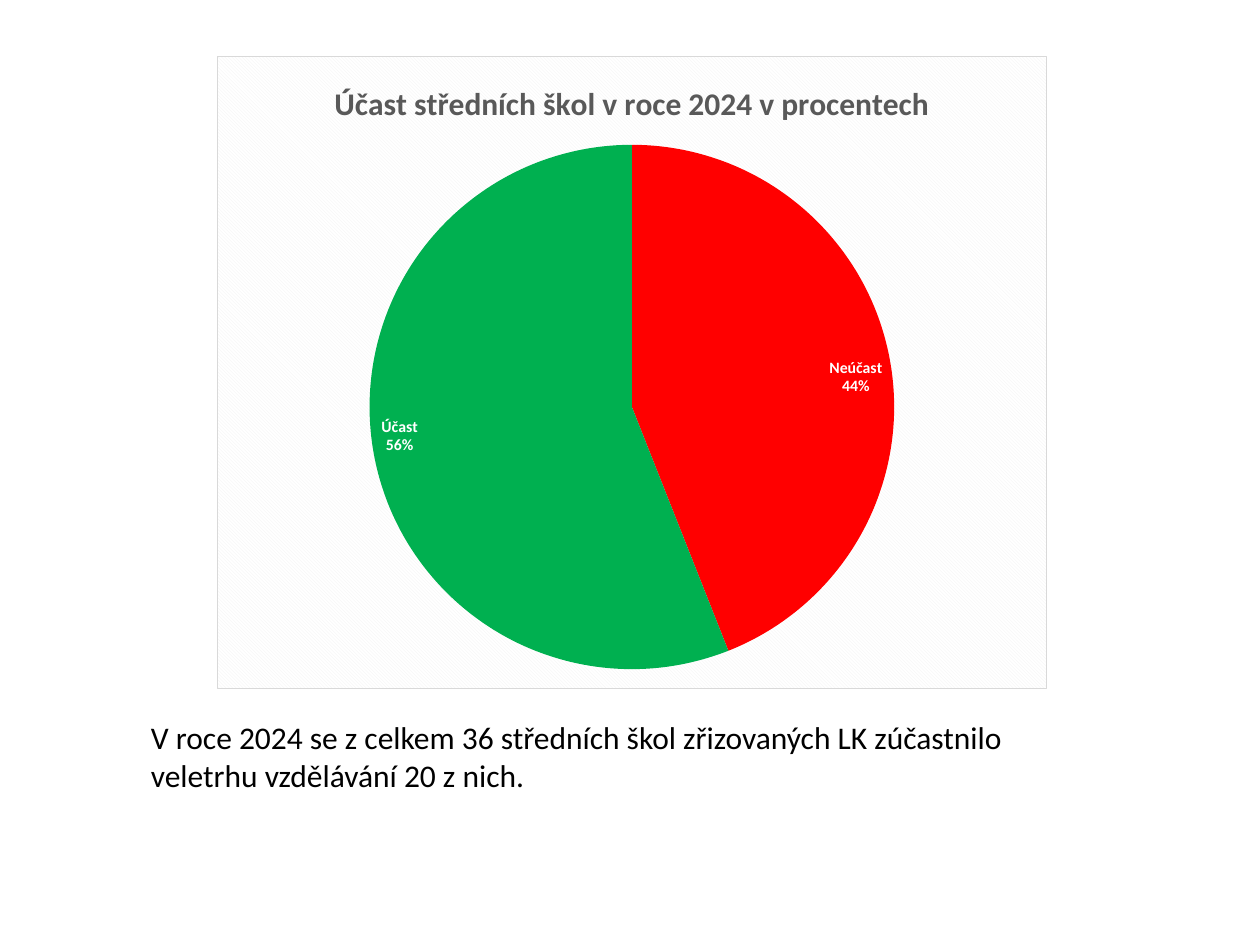
from dataclasses import dataclass

from lxml import etree
from pptx import Presentation
from pptx import util as u
from pptx.chart import data as chart_data
from pptx.dml.color import RGBColor
from pptx.enum import chart as chart_enum
from pptx.enum import text
from pptx.oxml import parse_xml
from pptx.oxml.ns import nsdecls, qn

WIDTH, HEIGHT = u.Inches(10), u.Inches(7.5)


@dataclass(frozen=True)
class Theme:
    """Colours, font and type sizes of the slide."""
    font: str = "Calibri"
    ink: str = "000000"
    title_ink: str = "595959"
    label_ink: str = "FFFFFF"
    absent: str = "FF0000"
    present: str = "00B050"
    hatch: str = "F2F2F2"
    paper: str = "FFFFFF"
    border: str = "D9D9D9"
    heading: int = 18
    base: int = 10
    label: int = 9


THEME = Theme()


def share_box(left, top, width, height):
    """Turn shares of the slide's size into lengths."""
    return (int(left * WIDTH), int(top * HEIGHT),
            int(width * WIDTH), int(height * HEIGHT))


def style_font(font, size, color, bold=False):
    """Apply the theme font with a size, colour and weight."""
    font.name = THEME.font
    font.size = u.Pt(size)
    font.bold = bold
    font.color.rgb = RGBColor.from_string(color)


def fill_chart_area(chart):
    """Give the chart area its hatched fill and thin border."""
    area = parse_xml(
        f'<c:spPr {nsdecls("c", "a")}><a:pattFill prst="dkDnDiag">'
        f'<a:fgClr><a:srgbClr val="{THEME.hatch}"/></a:fgClr>'
        f'<a:bgClr><a:srgbClr val="{THEME.paper}"/></a:bgClr></a:pattFill>'
        f'<a:ln w="{u.Pt(0.75)}"><a:solidFill><a:srgbClr val="{THEME.border}"/>'
        '</a:solidFill></a:ln></c:spPr>')
    chart.element.find(qn("c:chart")).addnext(area)


def place_plot(chart, **shares):
    """Fix the inner plot area at shares of the chart's size."""
    plot_area = chart.element.find(qn("c:chart")).find(qn("c:plotArea"))
    for old in plot_area.findall(qn("c:layout")):
        plot_area.remove(old)
    layout = parse_xml(f'<c:layout {nsdecls("c")}/>')
    manual = etree.SubElement(layout, qn("c:manualLayout"))
    settings = {"layoutTarget": "inner", "xMode": "edge", "yMode": "edge", **shares}
    for name, value in settings.items():
        etree.SubElement(manual, qn(f"c:{name}")).set("val", str(value))
    plot_area.insert(0, layout)


def add_attendance_pie(slide, box):
    """Place the pie of attending and absent schools in the box."""
    data = chart_data.CategoryChartData()
    data.categories = ["Neúčast", "Účast"]
    data.add_series("Series 1", (44, 56))
    chart = slide.shapes.add_chart(chart_enum.XL_CHART_TYPE.PIE, *box, data).chart
    style_font(chart.font, THEME.base, THEME.ink)
    chart.has_legend = False
    chart.has_title = True
    run = chart.chart_title.text_frame.paragraphs[0].add_run()
    run.text = "Účast středních škol v roce 2024 v procentech"
    style_font(run.font, THEME.heading, THEME.title_ink, bold=True)
    chart.chart_title.include_in_layout = False

    plot = chart.plots[0]
    plot.vary_by_categories = True
    for index, color in enumerate((THEME.absent, THEME.present)):
        fill = plot.series[0].points[index].format.fill
        fill.solid()
        fill.fore_color.rgb = RGBColor.from_string(color)
    plot.has_data_labels = True
    labels = plot.data_labels
    labels.show_value = False
    labels.show_category_name = True
    labels.show_percentage = True
    labels.position = chart_enum.XL_LABEL_POSITION.INSIDE_END
    style_font(labels.font, THEME.label, THEME.label_ink, bold=True)
    fill_chart_area(chart)
    place_plot(chart, x=0.18, y=0.14, w=0.64, h=0.83)


def add_summary(slide, box):
    """Place the summary sentence in the box."""
    frame = slide.shapes.add_textbox(*box).text_frame
    frame.word_wrap = True
    frame.auto_size = text.MSO_AUTO_SIZE.SHAPE_TO_FIT_TEXT
    run = frame.paragraphs[0].add_run()
    run.text = ("V roce 2024 se z celkem 36 středních škol zřizovaných LK "
                "zúčastnilo veletrhu vzdělávání 20 z nich.")
    style_font(run.font, THEME.heading, THEME.ink)


def main():
    """Build and save the presentation."""
    presentation = Presentation()
    presentation.slide_width, presentation.slide_height = WIDTH, HEIGHT
    slide = presentation.slides.add_slide(presentation.slide_layouts[6])
    add_summary(slide, share_box(0.11, 0.753, 0.78, 0.095))
    add_attendance_pie(slide, share_box(0.172, 0.059, 0.659, 0.67))
    presentation.save("out.pptx")


if __name__ == "__main__":
    main()
